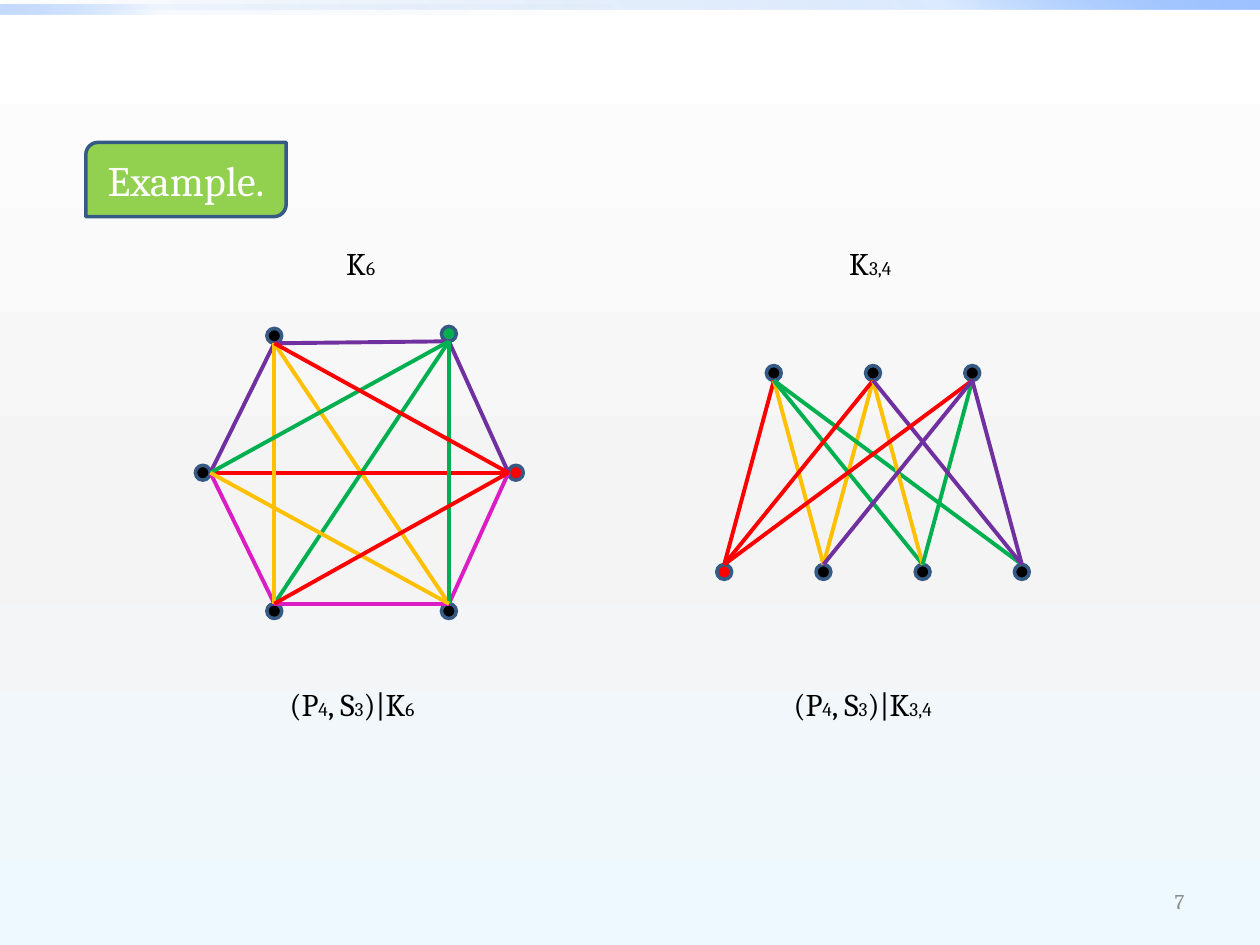
from lxml import etree
from pptx import Presentation
from pptx.dml.color import RGBColor
from pptx.enum.shapes import MSO_CONNECTOR, MSO_SHAPE
from pptx.enum.text import MSO_ANCHOR, MSO_AUTO_SIZE, PP_ALIGN
from pptx.oxml.ns import qn
from pptx.util import Cm, Pt

LINE = MSO_CONNECTOR.STRAIGHT
RECT, OVAL = MSO_SHAPE.RECTANGLE, MSO_SHAPE.OVAL
TAG = MSO_SHAPE.ROUND_2_DIAG_RECTANGLE
MIDDLE, TOP = MSO_ANCHOR.MIDDLE, MSO_ANCHOR.TOP
LEFT, CENTER, RIGHT = PP_ALIGN.LEFT, PP_ALIGN.CENTER, PP_ALIGN.RIGHT
FIT = MSO_AUTO_SIZE.SHAPE_TO_FIT_TEXT

FONT = "Cambria"
BLACK = RGBColor(0x00, 0x00, 0x00)
WHITE = RGBColor(0xFF, 0xFF, 0xFF)
GRAY = RGBColor(0x8C, 0x8C, 0x8C)
LIME = RGBColor(0x92, 0xD0, 0x50)
NAVY = RGBColor(0x35, 0x5A, 0x83)
RED = RGBColor(0xFF, 0x00, 0x00)
GREEN = RGBColor(0x00, 0xB0, 0x50)
GOLD = RGBColor(0xFF, 0xC0, 0x00)
PURPLE = RGBColor(0x70, 0x30, 0xA0)
PINK = RGBColor(0xDB, 0x1D, 0xC4)
PALE = RGBColor(0xF4, 0xF4, 0xF4)
ICE = RGBColor(0xEE, 0xF9, 0xFF)
DEEP = RGBColor(0x00, 0x58, 0xB7)
BLUE = RGBColor(0x4F, 0x95, 0xFF)
SKY = RGBColor(0x9E, 0xC2, 0xFF)

# Gradient stops: position, colour, opacity (all in percent)
BACK = [(0, WHITE, 100), (55, PALE, 100), (100, ICE, 100)]
BARS = [
    ((0, 0, 25.4, 0.2), [(0, DEEP, 0), (75, BLUE, 20), (100, SKY, 100)], 315),
    ((0, 0.1, 12.7, 0.2), [(0, DEEP, 0), (75, BLUE, 5), (100, SKY, 60)], 135),
]

# Labels: box, wrap, runs of text and size
BIG, SUB = 18, 11
PAIR = [("(P", BIG), ("4", SUB), (", S", BIG), ("3", SUB), (")|K", BIG)]
LABELS = [
    ((6.73, 4.8, 1.14, 1.02), False, [("K", BIG), ("6", SUB)]),
    ((16.87, 4.8, 1.47, 1.02), False, [("K", BIG), ("3,4", SUB)]),
    ((5.59, 13.69, 3.61, 1.02), True, PAIR + [("6", SUB)]),
    ((15.75, 13.69, 3.53, 1.02), False, PAIR + [("3,4", SUB)]),
]

# Nodes: centre, colour, direction in which the edges leave
RAD = 0.15
UP, DOWN, WEST, EAST = (0, -1), (0, 1), (-1, 0), (1, 0)
SIX = {
    "a": (5.53, 6.77, BLACK, DOWN),
    "b": (9.05, 6.73, GREEN, DOWN),
    "c": (4.09, 9.53, BLACK, EAST),
    "d": (10.4, 9.53, RED, WEST),
    "e": (5.53, 12.32, BLACK, UP),
    "f": (9.05, 12.32, BLACK, UP),
}
STEP = 2
PARTS = {key: (15.6 + STEP * i, 7.52, BLACK, DOWN) for i, key in enumerate("abc")}
PARTS |= {key: (14.6 + STEP * i, 11.53, RED if key == "p" else BLACK, UP)
          for i, key in enumerate("pqrs")}

# Each graph: nodes, then edges by colour in drawing order
GRAPHS = [
    (SIX, [(PURPLE, "ac ab bd"), (PINK, "ce df ef"), (GOLD, "af"),
           (GREEN, "be"), (RED, "cd"), (GOLD, "ae"), (GREEN, "bf cb"),
           (GOLD, "cf"), (RED, "ad ed")]),
    (PARTS, [(RED, "ap"), (GOLD, "bq aq"), (GREEN, "ra sa"), (RED, "pb"),
             (GOLD, "rb"), (GREEN, "rc"), (PURPLE, "bs"), (RED, "pc"),
             (PURPLE, "qc sc")]),
]


def shade(owner, fill, stops, angle):
    fill.gradient()
    grad = next(owner.element.iter(qn("a:gradFill")))
    grad.find(qn("a:lin")).set("ang", str(angle * 60000))
    items = grad.find(qn("a:gsLst"))
    for old in list(items):
        items.remove(old)
    for pos, color, alpha in stops:
        stop = etree.SubElement(items, qn("a:gs"), pos=str(pos * 1000))
        tone = etree.SubElement(stop, qn("a:srgbClr"), val=str(color))
        if alpha < 100:
            etree.SubElement(tone, qn("a:alpha"), val=str(alpha * 1000))


def add_shape(shapes, kind, box, color=None):
    shape = shapes.add_shape(kind, *map(Cm, box))
    shape.shadow.inherit = False
    if color is None:
        shape.line.fill.background()
    else:
        shape.fill.solid()
        shape.fill.fore_color.rgb = color
        shape.line.color.rgb = NAVY
        shape.line.width = Pt(2)
    return shape


def write(shape, runs, color=BLACK, align=LEFT, anchor=TOP, wrap=True):
    frame = shape.text_frame
    frame.word_wrap = wrap
    frame.vertical_anchor = anchor
    para = frame.paragraphs[0]
    para.alignment = align
    for text, size in runs:
        run = para.add_run()
        run.text = text
        run.font.name = FONT
        run.font.size = Pt(size)
        run.font.color.rgb = color


def add_edge(shapes, ends, color):
    spots = [Cm(v) for x, y, _, (dx, dy) in ends
             for v in (x + RAD * dx, y + RAD * dy)]
    edge = shapes.add_connector(LINE, *spots)
    edge.line.color.rgb = color
    edge.line.width = Pt(2.25)
    etree.SubElement(edge.element.spPr, qn("a:effectLst"))


def add_graph(shapes, nodes, edges):
    for x, y, color, _ in nodes.values():
        add_shape(shapes, OVAL, (x - RAD, y - RAD, 2 * RAD, 2 * RAD), color)
    for color, pairs in edges:
        for pair in pairs.split():
            add_edge(shapes, [nodes[key] for key in pair], color)


def main():
    deck = Presentation()
    deck.slide_width, deck.slide_height = Cm(25.4), Cm(19.05)
    slide = deck.slides.add_slide(deck.slide_layouts[6])
    shapes = slide.shapes

    # Background and top bars
    shade(slide, slide.background.fill, BACK, 90)
    for box, stops, angle in BARS:
        bar = add_shape(shapes, RECT, box)
        shade(bar, bar.fill, stops, angle)

    # Page number and heading tag
    page = shapes.add_textbox(*map(Cm, (18.21, 17.65, 5.92, 1.02)))
    write(page, [("7", 12)], GRAY, RIGHT, MIDDLE)
    tag = add_shape(shapes, TAG, (1.73, 2.87, 4.04, 1.5), LIME)
    write(tag, [("Example.", 24)], WHITE, CENTER, MIDDLE)

    # Graphs and their labels
    for nodes, edges in GRAPHS:
        add_graph(shapes.add_group_shape().shapes, nodes, edges)
    for box, wrap, runs in LABELS:
        label = shapes.add_textbox(*map(Cm, box))
        write(label, runs, wrap=wrap)
        label.text_frame.auto_size = FIT

    deck.save("out.pptx")


if __name__ == "__main__":
    main()
